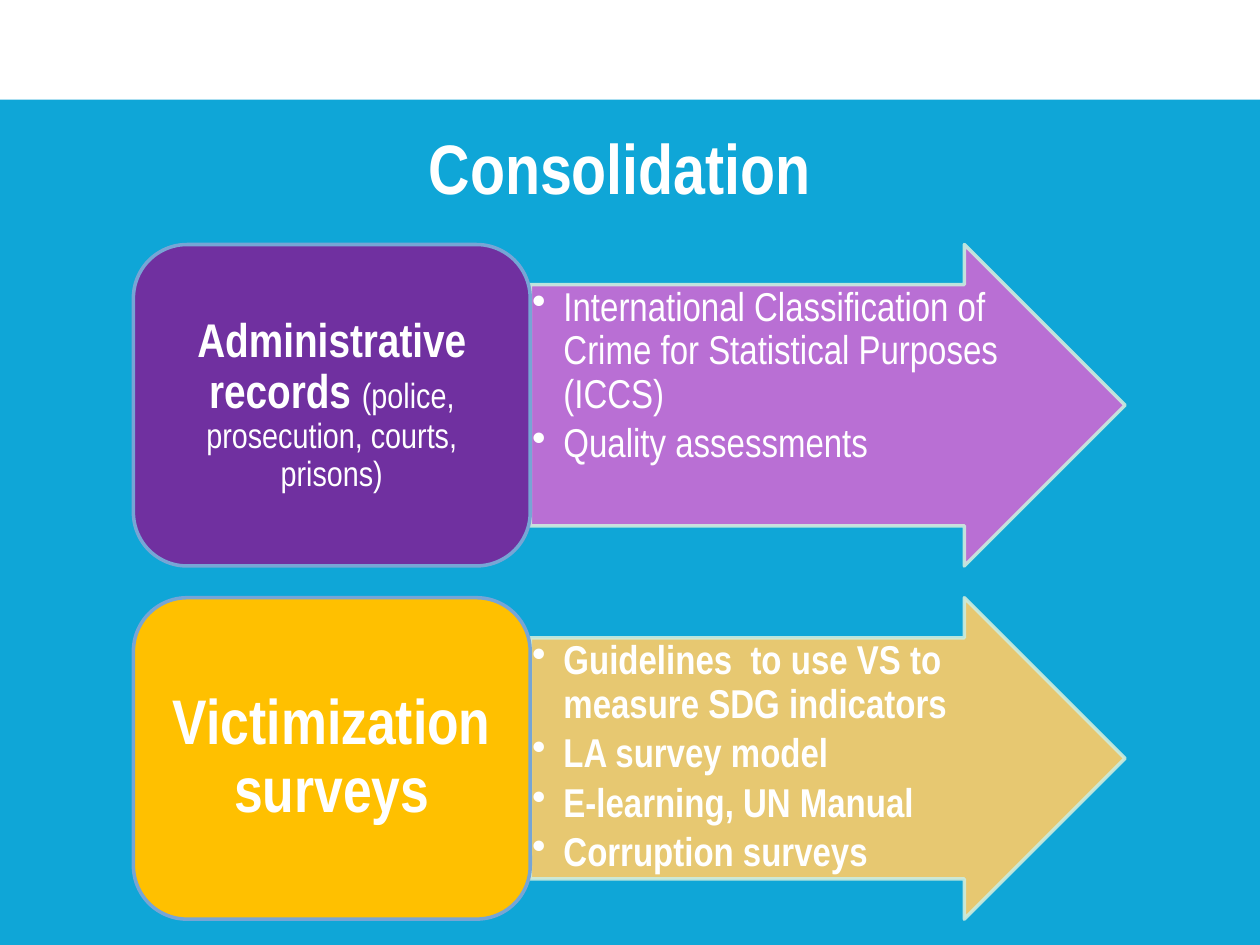
import pptx
import pptx.dml.color
import pptx.enum.shapes
import pptx.enum.text
import pptx.oxml
import pptx.oxml.ns
import pptx.util
from lxml import etree

Cm = pptx.util.Cm
Pt = pptx.util.Pt
RGBColor = pptx.dml.color.RGBColor
SHAPE = pptx.enum.shapes.MSO_SHAPE
ANCHOR = pptx.enum.text.MSO_ANCHOR
ALIGN = pptx.enum.text.PP_ALIGN
qn = pptx.oxml.ns.qn

SKY = RGBColor(0x0F, 0xA6, 0xD7)
WHITE = RGBColor(0xFF, 0xFF, 0xFF)
PURPLE = RGBColor(0x70, 0x30, 0xA0)
ORCHID = RGBColor(0xCC, 0x6A, 0xD4)
AMBER = RGBColor(0xFF, 0xC0, 0x00)
SAND = RGBColor(0xFF, 0xCC, 0x66)
SOURCE_EDGE = RGBColor(0x77, 0xA5, 0xD5)
ARROW_EDGE = RGBColor(0xCC, 0xEC, 0xDE)

TITLE = "Consolidation"
SOURCES = [
    {
        "label": [("Administrative records ", 27, True),
                  ("(police, prosecution, courts, prisons)", 20, False)],
        "label_insets": (0.28, 0.15),
        "actions": ["International Classification of Crime for Statistical Purposes (ICCS)",
                    "Quality assessments"],
        "bold_actions": False,
        "colors": (PURPLE, ORCHID),
    },
    {
        "label": [("Victimization surveys", 36, True)],
        "label_insets": (0.38, 0.18),
        "actions": ["Guidelines  to use VS to measure SDG indicators",
                    "LA survey model", "E-learning, UN Manual", "Corruption surveys"],
        "bold_actions": True,
        "colors": (AMBER, SAND),
    },
]

LEFT, TOP, ROW_HEIGHT, ROW_PITCH = 2.69, 4.93, 6.48, 7.12
SOURCE_WIDTH, ARROW_WIDTH = 8, 11.99
ARROW_LEFT = LEFT + SOURCE_WIDTH
LABEL_PAD = 0.32
ACTIONS_WIDTH = 9.58
SHAFT = 0.75
BULLET_INDENT = Cm(0.63)


def apply(target, formats):
    for name, value in formats.items():
        setattr(target, name, value)


def set_opacity(fill, percent):
    color = fill._xPr.find(qn("a:solidFill"))[0]
    etree.SubElement(color, qn("a:alpha")).set("val", str(percent * 1000))


def add_block(slide, kind, place, fill, edge=None, opacity=100):
    block = slide.shapes.add_shape(kind, *map(Cm, place))
    block.shadow.inherit = False
    block.fill.solid()
    block.fill.fore_color.rgb = fill
    if edge is None:
        block.line.fill.background()
        return block
    block.line.width = Pt(2)
    block.line.color.rgb = edge
    if opacity < 100:
        set_opacity(block.fill, opacity)
        set_opacity(block.line.fill, opacity)
    return block


def add_text(slide, place, paragraphs, insets, anchor, formats, bulleted=False):
    frame = slide.shapes.add_textbox(*map(Cm, place)).text_frame
    across, down = map(Cm, insets)
    apply(frame, {"word_wrap": True, "vertical_anchor": anchor,
                  "margin_left": across, "margin_right": across,
                  "margin_top": down, "margin_bottom": down})
    for index, runs in enumerate(paragraphs):
        paragraph = frame.add_paragraph() if index else frame.paragraphs[0]
        if bulleted:
            properties = paragraph._p.get_or_add_pPr()
            properties.set("marL", str(BULLET_INDENT))
            properties.set("indent", str(-BULLET_INDENT))
            etree.SubElement(properties, qn("a:buChar")).set("char", "•")
        apply(paragraph, formats)
        for words, size, bold in runs:
            run = paragraph.add_run()
            run.text = words
            apply(run.font, {"name": "Arial Narrow", "size": Pt(size), "bold": bold})
            run.font.color.rgb = WHITE


def add_source(slide, top, source):
    source_color, arrow_color = source["colors"]
    arrow = add_block(slide, SHAPE.RIGHT_ARROW, (ARROW_LEFT, top, ARROW_WIDTH, ROW_HEIGHT),
                      arrow_color, ARROW_EDGE, 90)
    arrow.adjustments[0] = SHAFT
    shaft_height = ROW_HEIGHT * SHAFT
    shaft_top = top + (ROW_HEIGHT - shaft_height) / 2
    add_text(slide, (ARROW_LEFT, shaft_top, ACTIONS_WIDTH, shaft_height),
             [[(action, 23, source["bold_actions"])] for action in source["actions"]],
             (0.04, 0.04), ANCHOR.TOP,
             {"level": 1, "line_spacing": 0.9, "space_after": Pt(3.5)}, bulleted=True)
    add_block(slide, SHAPE.ROUNDED_RECTANGLE, (LEFT, top, SOURCE_WIDTH, ROW_HEIGHT),
              source_color, SOURCE_EDGE)
    add_text(slide, (LEFT + LABEL_PAD, top + LABEL_PAD,
                     SOURCE_WIDTH - 2 * LABEL_PAD, ROW_HEIGHT - 2 * LABEL_PAD),
             [source["label"]], source["label_insets"], ANCHOR.MIDDLE,
             {"alignment": ALIGN.CENTER, "line_spacing": 0.9})


def main():
    deck = pptx.Presentation()
    apply(deck, {"slide_width": Cm(25.4), "slide_height": Cm(19.05)})
    slide = deck.slides.add_slide(deck.slide_layouts[6])
    slide.background.fill.solid()
    slide.background.fill.fore_color.rgb = SKY
    add_block(slide, SHAPE.RECTANGLE, (0, 0, 25.4, 2.01), WHITE)
    add_text(slide, (1.7, 1.32, 21.59, 4.09), [[(TITLE, 40, True)]], (0.25, 0.13),
             ANCHOR.MIDDLE, {"alignment": ALIGN.CENTER})
    for row, source in enumerate(SOURCES):
        add_source(slide, TOP + row * ROW_PITCH, source)
    deck.save("out.pptx")


if __name__ == "__main__":
    main()
